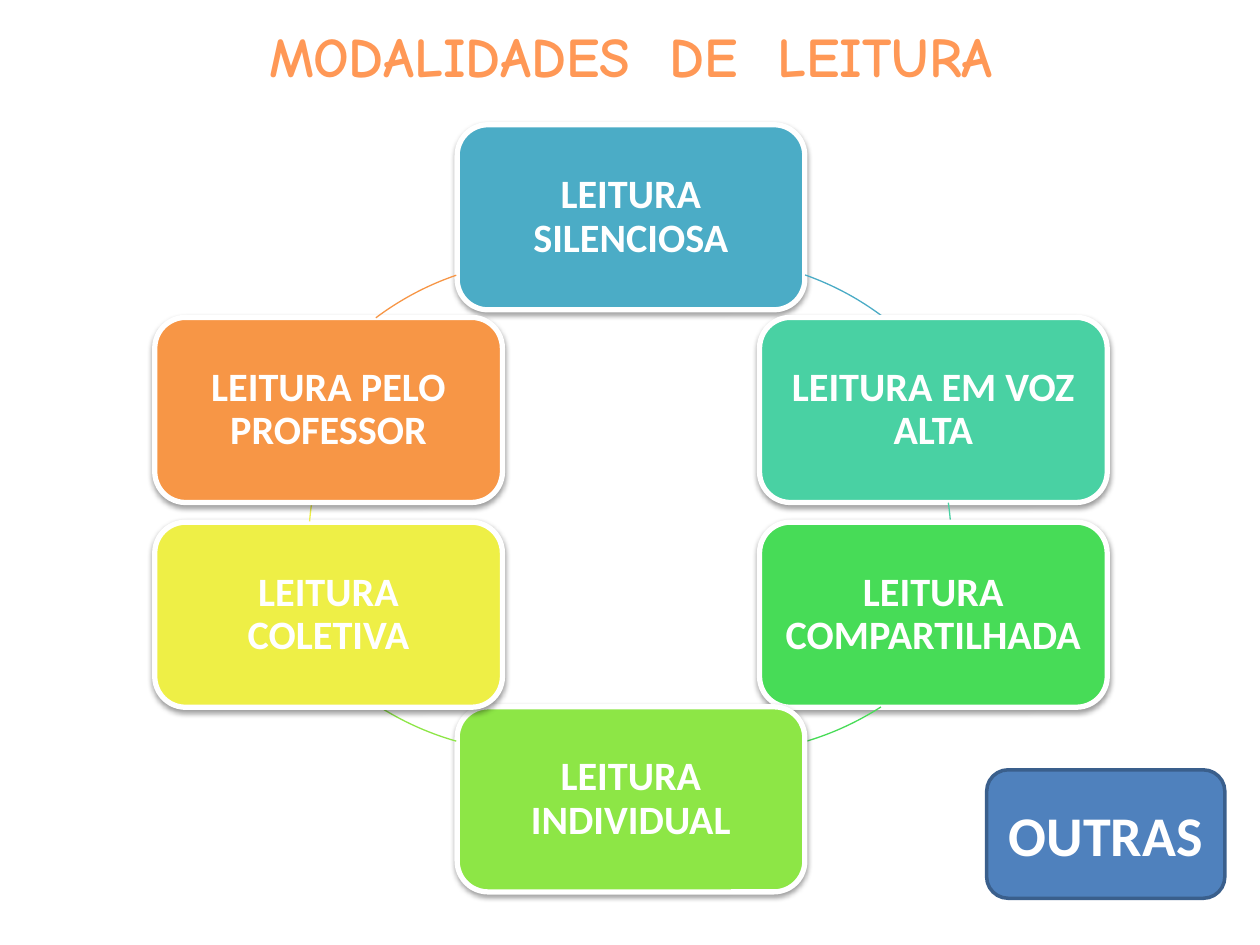
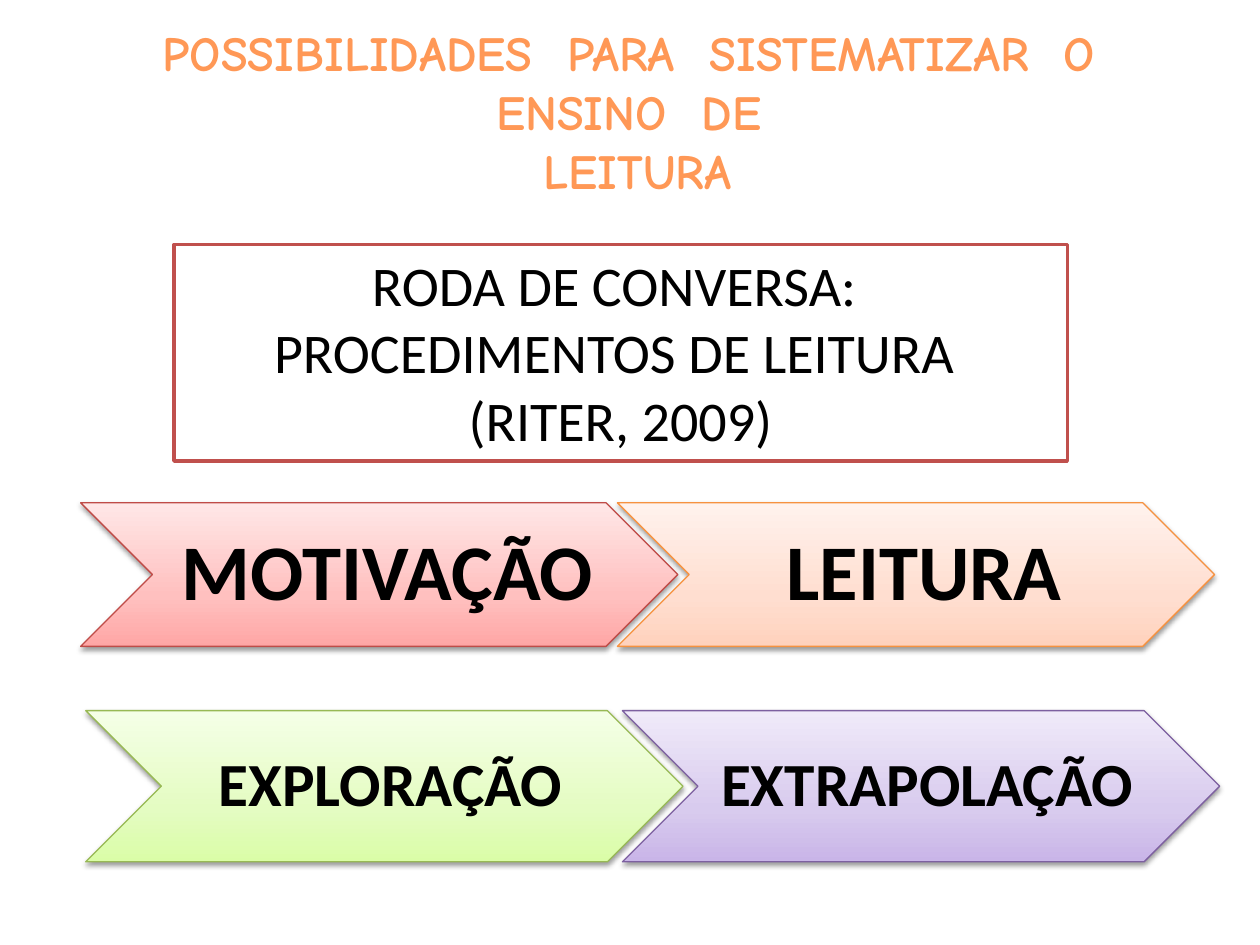
from lxml.etree import SubElement
from pptx import Presentation
from pptx.dml.color import RGBColor
from pptx.enum.shapes import MSO_SHAPE
from pptx.enum.text import MSO_ANCHOR, PP_ALIGN
from pptx.oxml.ns import qn
from pptx.util import Pt

# Shared look
HUES = {
    "white": "FFFFFF", "black": "000000", "title": "FF9856",
    "teal": "4BACC6", "mint": "49D1A3", "green": "47DC57",
    "lime": "8DE646", "lemon": "EEEF46", "orange": "F79646",
    "blue": "4F81BD", "navy": "3A5F8C", "brick": "C0504D",
    "red rim": "BF4C48", "peach rim": "F69240",
    "grass rim": "98B955", "plum rim": "7D60A0",
}
BODY, HEAD = "Calibri", "Comic Neue"

# Slide 1: cards around a wheel, clockwise from the top
# text, hue, column (-1 left, 0 middle, 1 right), top
# then the arc to the next card: left, top, from angle, to angle
CARDS = [
    ("LEITURA SILENCIOSA", "teal", 0, 71.3, (238.3, 147.6, 289.5, 307.1)),
    ("LEITURA EM VOZ ALTA", "mint", 1, 181.4, (211, 144.7, 351.8, 355.5)),
    ("LEITURA COMPARTILHADA", "green", 1, 298.4, (247, 97.9, 57.2, 73.7)),
    ("LEITURA INDIVIDUAL", "lime", 0, 403.9, (139.7, 97.2, 105.8, 122.5)),
    ("LEITURA COLETIVA", "lemon", -1, 298.4, (176.4, 144.7, 184.5, 188.2)),
    ("LEITURA PELO PROFESSOR", "orange", -1, 181.4,
     (148.3, 148.3, 233.1, 251.1)),
]
CARD_W, CARD_H = 198.7, 105.8
MID, STEP, WHEEL = 360.6, 172.8, 332.6

# Slide 2: two rows of steps
TALK = ["RODA DE CONVERSA: ", "PROCEDIMENTOS DE LEITURA ", "(RITER, 2009)"]
# left, top, height, text size, insets, steps (text, rim, gradient upwards)
ROWS = [
    (46.1, 287.3, 82.1, 45, (14.4, 5, 5, 5), [
        ("MOTIVAÇÃO", "red rim", ("FFA6A5", "FFC0BF", "FFE7E7")),
        ("LEITURA", "peach rim", ("FFD2BD", "FFDED0", "FFF2ED"))]),
    (49, 406.1, 86.4, 35, (10.8, 3.6, 3.6, 3.6), [
        ("EXPLORAÇÃO", "grass rim", ("DAFDA7", "E4FCC2", "F5FFE7")),
        ("EXTRAPOLAÇÃO", "plum rim", ("C9B5E8", "D8CBEE", "F0EAF9"))]),
]
STEP_W, STEP_GAP = 341.3, 306.7
STOPS = (0, 35, 100)


def hue(name):
    return RGBColor.from_string(HUES[name])


def write(shape, lines, size, tint, font=BODY, bold=True, pads=None,
          space=None, anchor=MSO_ANCHOR.MIDDLE, wrap=True):
    frame = shape.text_frame
    frame.word_wrap = wrap
    frame.vertical_anchor = anchor
    if pads:
        (frame.margin_left, frame.margin_top,
         frame.margin_right, frame.margin_bottom) = map(Pt, pads)
    for i, line in enumerate(lines):
        para = frame.add_paragraph() if i else frame.paragraphs[0]
        para.alignment = PP_ALIGN.CENTER
        if space:
            para.line_spacing = space
        run = para.add_run()
        run.text = line
        run.font.name, run.font.size, run.font.bold = font, Pt(size), bold
        run.font.color.rgb = hue(tint)


def draw(slide, kind, box, fill, rim, width):
    shape = slide.shapes.add_shape(kind, *map(Pt, box))
    shape.shadow.inherit = False
    if fill is None:
        shape.fill.background()
    elif isinstance(fill, tuple):
        blend(shape, fill)
    else:
        shape.fill.solid()
        shape.fill.fore_color.rgb = hue(fill)
    shape.line.color.rgb = hue(rim)
    shape.line.width = Pt(width)
    return shape


def blend(shape, tones):
    shape.fill.gradient()
    shape.fill.gradient_angle = 90
    stops = shape.element.spPr.find(".//" + qn("a:gsLst"))
    for old in list(stops):
        stops.remove(old)
    for place, tone in zip(STOPS, tones):
        stop = SubElement(stops, qn("a:gs"), pos=str(place * 1000))
        SubElement(stop, qn("a:srgbClr"), val=tone)


def shade(shape):
    group = shape.element.spPr.find(qn("a:effectLst"))
    cast = SubElement(group, qn("a:outerShdw"), blurRad=str(Pt(3.1)),
                      dist=str(Pt(1.6)), dir="5400000", rotWithShape="0")
    tone = SubElement(cast, qn("a:srgbClr"), val=HUES["black"])
    SubElement(tone, qn("a:alpha"), val="38000")


def title(slide, box, lines, size, wrap=True):
    write(slide.shapes.add_textbox(*map(Pt, box)), lines, size, "title",
          HEAD, anchor=MSO_ANCHOR.TOP, wrap=wrap)


def wheel(slide):
    title(slide, (82.1, 8.6, 557.3, 46.1), ["MODALIDADES  DE  LEITURA"],
          32, wrap=False)
    for text, tint, col, top, (x, y, start, end) in CARDS:
        left = MID + col * STEP - CARD_W / 2
        card = draw(slide, MSO_SHAPE.ROUNDED_RECTANGLE,
                    (left, top, CARD_W, CARD_H), tint, "white", 3)
        shade(card)
        write(card, [text], 23, "white", pads=(7,) * 4, space=0.9)
        arc = draw(slide, MSO_SHAPE.ARC, (x, y, WHEEL, WHEEL),
                   None, tint, 0.75)
        # One degree is 60000 units, and an adjustment of 1 is 100000
        arc.adjustments[0], arc.adjustments[1] = start * 0.6, end * 0.6
    more = draw(slide, MSO_SHAPE.ROUNDED_RECTANGLE,
                (563.8, 439.9, 136.1, 73.4), "blue", "navy", 2)
    write(more, ["OUTRAS"], 32, "white")


def steps(slide):
    for left, top, height, size, pads, row in ROWS:
        for i, (text, rim, tones) in enumerate(row):
            step = draw(slide, MSO_SHAPE.CHEVRON,
                        (left + i * STEP_GAP, top, STEP_W, height),
                        tones, rim, 0.75)
            shade(step)
            write(step, [text], size, "black", pads=pads, space=0.9)
    talk = draw(slide, MSO_SHAPE.RECTANGLE, (99.4, 139.7, 510.5, 123.8),
                "white", "brick", 2)
    write(talk, TALK, 32, "black", bold=False, anchor=MSO_ANCHOR.TOP)
    title(slide, (48.2, 9.4, 632.2, 108.7),
          ["POSSIBILIDADES  PARA  SISTEMATIZAR  O  ENSINO  DE ", "LEITURA"],
          28)


def main():
    deck = Presentation()
    deck.slide_width, deck.slide_height = Pt(720), Pt(540)
    for build in (wheel, steps):
        build(deck.slides.add_slide(deck.slide_layouts[6]))
    deck.save("out.pptx")


if __name__ == "__main__":
    main()
